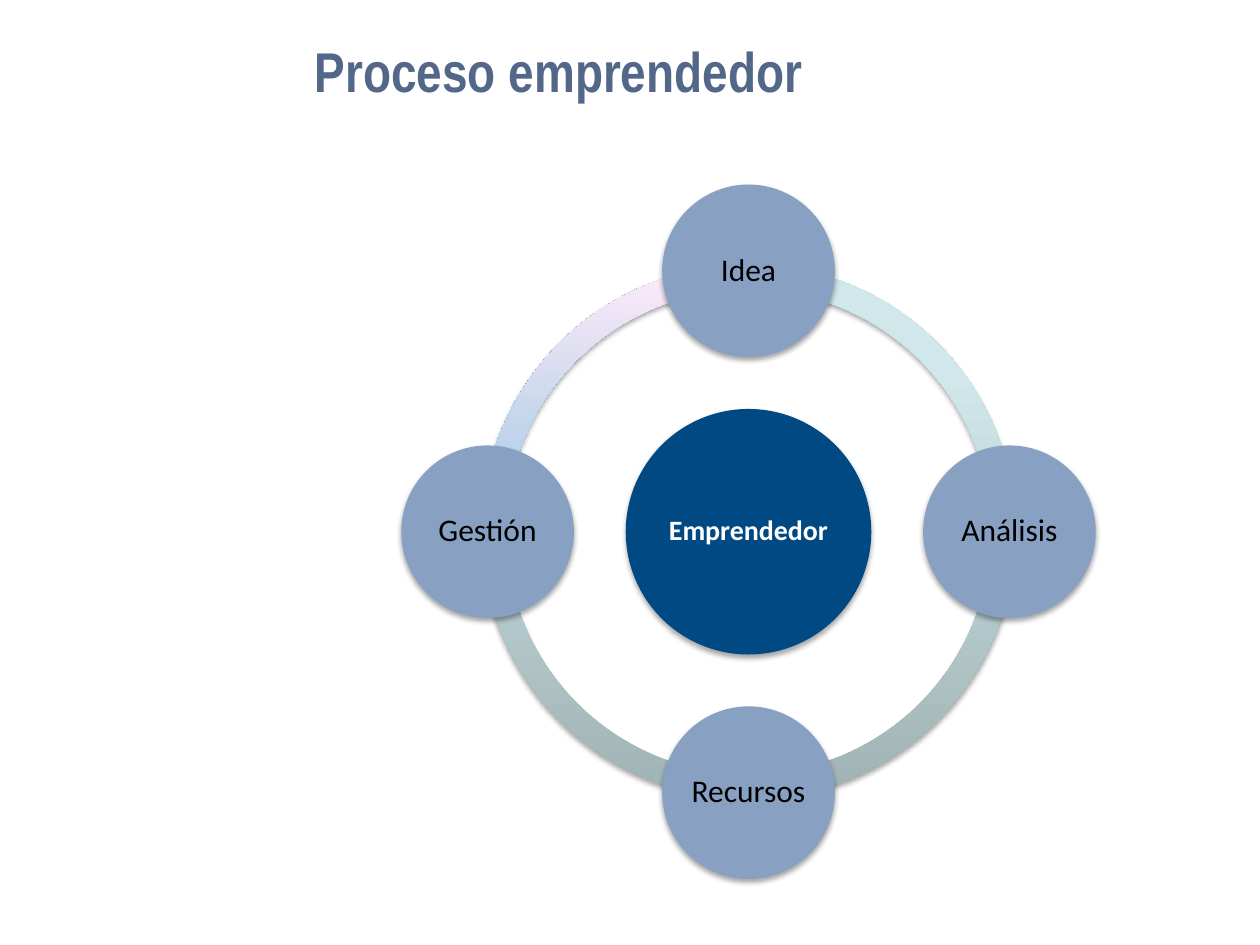
from dataclasses import dataclass
from math import cos, radians, sin

from lxml import etree
from pptx import Presentation
from pptx.dml.color import RGBColor
from pptx.enum.shapes import MSO_SHAPE
from pptx.enum.text import MSO_ANCHOR, PP_ALIGN
from pptx.oxml import parse_xml
from pptx.oxml.ns import nsdecls, qn
from pptx.util import Cm, Pt

ELLIPSE = MSO_SHAPE.OVAL
BLOCK_ARC = MSO_SHAPE.BLOCK_ARC
MIDDLE = MSO_ANCHOR.MIDDLE
CENTER = PP_ALIGN.CENTER

COLORS = {
    "title": "536788",
    "hub": "014983",
    "hub_text": "FFFFFF",
    "step": "88A1C3",
    "step_text": "000000",
    "shadow": "000000",
}
# Gradient stops as (percent, colour), running from bottom to top
TEAL = ((0, "A0B3B4"), (80, "D0E8EA"), (100, "D0EAEC"))
PINK = ((0, "606060"), (40, "85C2FF"), (70, "C4D6EB"), (100, "FFEBFA"))

# Wheel geometry in centimetres
CENTER_X, CENTER_Y = 15.09, 10.72
ORBIT = 5.26
RING_SIZE, HUB_SIZE, STEP_SIZE = 10.77, 4.95, 3.48
RING_THICKNESS = 0.046


@dataclass
class Arc:
    start: int
    stops: tuple


@dataclass
class Disc:
    label: str
    x: float
    y: float
    size: float
    fill: str
    color: str
    points: int
    bold: bool = False


def rgb(name: str) -> RGBColor:
    return RGBColor.from_string(COLORS[name])


def add_round_shape(page, kind, x: float, y: float, size: float):
    """Add a borderless shape centred on (x, y) with a soft shadow below."""
    shape = page.shapes.add_shape(
        kind, Cm(x - size / 2), Cm(y - size / 2), Cm(size), Cm(size))
    shape.line.fill.background()
    shape.shadow.inherit = False
    effects = shape._element.spPr.find(qn("a:effectLst"))
    shadow = etree.SubElement(
        effects, qn("a:outerShdw"), blurRad=str(Pt(3.1)), dist=str(Pt(1.8)),
        dir="5400000", rotWithShape="0")
    color = etree.SubElement(shadow, qn("a:srgbClr"), val=COLORS["shadow"])
    etree.SubElement(color, qn("a:alpha"), val="35000")
    return shape


def add_arc(page, arc: Arc) -> None:
    shape = add_round_shape(page, BLOCK_ARC, CENTER_X, CENTER_Y, RING_SIZE)
    # Angles are stored in 60000ths of a degree, adjustments in 100000ths
    shape.adjustments[0] = arc.start * 0.6
    shape.adjustments[1] = (arc.start + 90) % 360 * 0.6
    shape.adjustments[2] = RING_THICKNESS
    stops = "".join(
        f'<a:gs pos="{percent * 1000}"><a:srgbClr val="{color}"/></a:gs>'
        for percent, color in arc.stops)
    gradient = parse_xml(
        f'<a:gradFill {nsdecls("a")} rotWithShape="1"><a:gsLst>{stops}</a:gsLst>'
        '<a:lin ang="16200000" scaled="0"/></a:gradFill>')
    shape._element.spPr.find(qn("a:prstGeom")).addnext(gradient)


def add_disc(page, disc: Disc) -> None:
    shape = add_round_shape(page, ELLIPSE, disc.x, disc.y, disc.size)
    shape.fill.solid()
    shape.fill.fore_color.rgb = rgb(disc.fill)
    frame = shape.text_frame
    frame.word_wrap = False
    frame.vertical_anchor = MIDDLE
    frame.margin_left = frame.margin_right = Cm(0.06)
    frame.margin_top = frame.margin_bottom = Cm(0.06)
    para = frame.paragraphs[0]
    para.text = disc.label
    para.alignment = CENTER
    para.line_spacing = 0.9
    para.font.name = "Calibri"
    para.font.size = Pt(disc.points)
    para.font.bold = disc.bold
    para.font.color.rgb = rgb(disc.color)


def add_title(page, text: str) -> None:
    box = page.shapes.add_textbox(Cm(6.1), Cm(0.53), Cm(18.39), Cm(1.75))
    box.text_frame.word_wrap = True
    box.text_frame.vertical_anchor = MIDDLE
    para = box.text_frame.paragraphs[0]
    para.text = text
    para.font.name = "Arial Narrow"
    para.font.size = Pt(32)
    para.font.bold = True
    para.font.color.rgb = rgb("title")


def main() -> None:
    deck = Presentation()
    deck.slide_width, deck.slide_height = Cm(25.4), Cm(19.05)
    page = deck.slides.add_slide(deck.slide_layouts[6])

    add_title(page, "Proceso emprendedor")

    # Ring of four quarter arcs
    for arc in (Arc(180, PINK), Arc(90, TEAL), Arc(0, TEAL), Arc(270, TEAL)):
        add_arc(page, arc)

    # Hub
    add_disc(page, Disc("Emprendedor", CENTER_X, CENTER_Y, HUB_SIZE,
                        "hub", "hub_text", 16, bold=True))

    # Steps, clockwise from the top
    for index, label in enumerate(("Idea", "Análisis", "Recursos", "Gestión")):
        angle = radians(90 * index - 90)
        add_disc(page, Disc(label, CENTER_X + ORBIT * cos(angle),
                            CENTER_Y + ORBIT * sin(angle), STEP_SIZE,
                            "step", "step_text", 18))

    deck.save("out.pptx")


if __name__ == "__main__":
    main()
